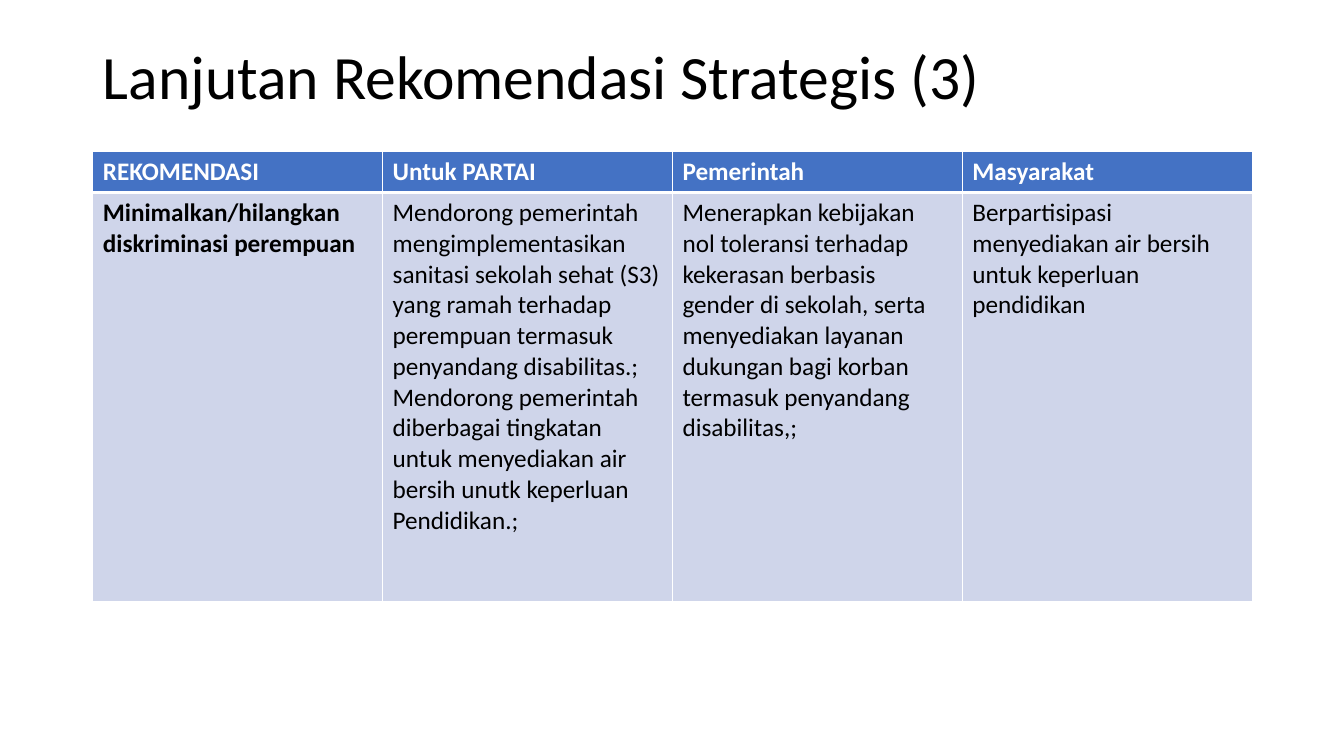
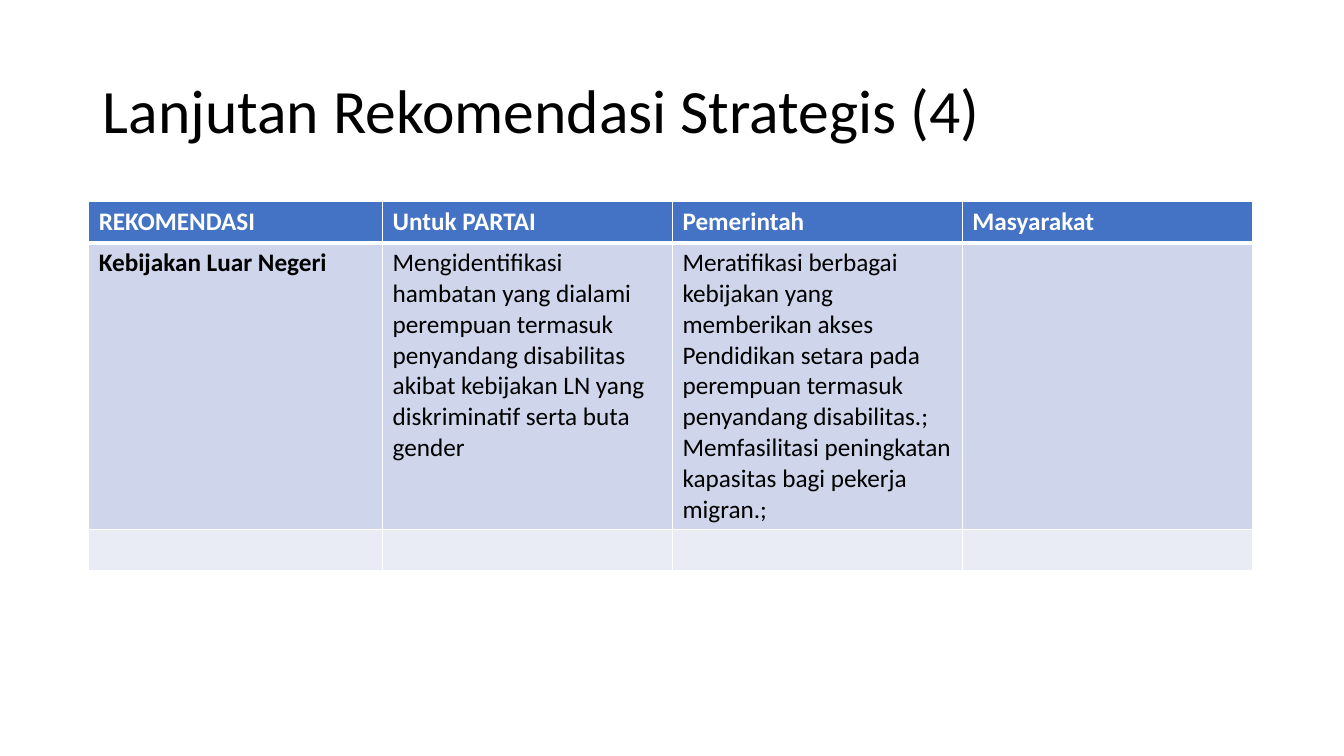
from lxml.etree import SubElement
from pptx import Presentation
from pptx.dml.color import RGBColor
from pptx.enum.text import MSO_ANCHOR
from pptx.oxml.ns import qn
from pptx.util import Inches, Pt

FONT = "Calibri"
WHITE = RGBColor(0xFF, 0xFF, 0xFF)
BLACK = RGBColor(0, 0, 0)
HEADER_FILL = RGBColor(0x44, 0x72, 0xC4)
BAND_FILLS = [RGBColor(0xE9, 0xEB, 0xF5), RGBColor(0xCF, 0xD5, 0xEA)]

SLIDE_W, SLIDE_H = 13.33, 7.5
RIGHT, TITLE_LEFT, TITLE_TOP = 12.42, 0.92, 0.4
COL_W, HEAD_H = 2.875, 0.41

HEADER = ["REKOMENDASI", "Untuk PARTAI", "Pemerintah", "Masyarakat"]
SLIDES = [
    {
        "title": "Lanjutan Rekomendasi Strategis (3)",
        "title_h": 0.78,
        "left": 0.92,
        "top": 1.5,
        "heights": [4.06],
        "rows": [[
            "Minimalkan/hilangkan diskriminasi perempuan",
            "Mendorong pemerintah mengimplementasikan sanitasi sekolah sehat (S3) "
            "yang ramah terhadap perempuan termasuk penyandang disabilitas.;\n"
            "Mendorong pemerintah diberbagai tingkatan untuk menyediakan air bersih "
            "unutk keperluan Pendidikan.;",
            "Menerapkan kebijakan nol toleransi terhadap kekerasan berbasis gender "
            "di sekolah, serta menyediakan layanan dukungan bagi korban termasuk "
            "penyandang disabilitas,;",
            "Berpartisipasi menyediakan air bersih untuk keperluan pendidikan",
        ]],
    },
    {
        "title": "Lanjutan Rekomendasi Strategis (4)",
        "title_h": 1.45,
        "left": 0.88,
        "top": 2,
        "heights": [2.84, 0.41],
        "rows": [
            [
                "Kebijakan Luar Negeri",
                "Mengidentifikasi hambatan yang dialami perempuan termasuk penyandang "
                "disabilitas akibat kebijakan LN yang diskriminatif serta buta gender",
                "Meratifikasi berbagai kebijakan yang memberikan akses Pendidikan "
                "setara pada perempuan termasuk penyandang disabilitas.;\n"
                "Memfasilitasi peningkatan kapasitas bagi pekerja migran.;",
                "",
            ],
            [""] * 4,
        ],
    },
]


def style_text(tf, size, color, bold=False):
    for p in tf.paragraphs:
        for r in p.runs:
            r.font.name = FONT
            r.font.size = Pt(size)
            r.font.bold = bold
            r.font.color.rgb = color


def add_title(s, text, height):
    sp = s.shapes.add_textbox(Inches(TITLE_LEFT), Inches(TITLE_TOP),
                              Inches(RIGHT - TITLE_LEFT), Inches(height))
    tf = sp.text_frame
    tf.word_wrap = True
    tf.vertical_anchor = MSO_ANCHOR.MIDDLE
    tf.text = text
    tf.paragraphs[0].line_spacing = 0.9
    style_text(tf, 44, BLACK)


def set_borders(cell, row):
    widths = {"L": 1, "R": 1, "T": 3 if row == 1 else 1, "B": 3 if row == 0 else 1}
    tc_pr = cell._tc.get_or_add_tcPr()
    for side, width in widths.items():
        ln = SubElement(tc_pr, qn(f"a:ln{side}"), w=str(Pt(width)))
        fill = SubElement(ln, qn("a:solidFill"))
        SubElement(fill, qn("a:srgbClr"), val=str(WHITE))


def add_recommendations(s, left, top, rows, heights):
    rows = [HEADER] + rows
    heights = [HEAD_H] + heights
    widths = [RIGHT - left - 3 * COL_W] + [COL_W] * 3
    table = s.shapes.add_table(len(rows), len(HEADER), Inches(left), Inches(top),
                               Inches(sum(widths)), Inches(sum(heights))).table
    for column, width in zip(table.columns, widths):
        column.width = Inches(width)
    for i, (row, height) in enumerate(zip(rows, heights)):
        table.rows[i].height = Inches(height)
        for j, text in enumerate(row):
            cell = table.cell(i, j)
            set_borders(cell, i)
            cell.fill.solid()
            cell.fill.fore_color.rgb = BAND_FILLS[i % 2] if i else HEADER_FILL
            cell.text_frame.text = text
            style_text(cell.text_frame, 18, BLACK if i else WHITE, i == 0 or j == 0)


def main():
    prs = Presentation()
    prs.slide_width, prs.slide_height = Inches(SLIDE_W), Inches(SLIDE_H)
    for data in SLIDES:
        s = prs.slides.add_slide(prs.slide_layouts[6])
        add_title(s, data["title"], data["title_h"])
        add_recommendations(s, data["left"], data["top"], data["rows"], data["heights"])
    prs.save("out.pptx")


if __name__ == "__main__":
    main()
